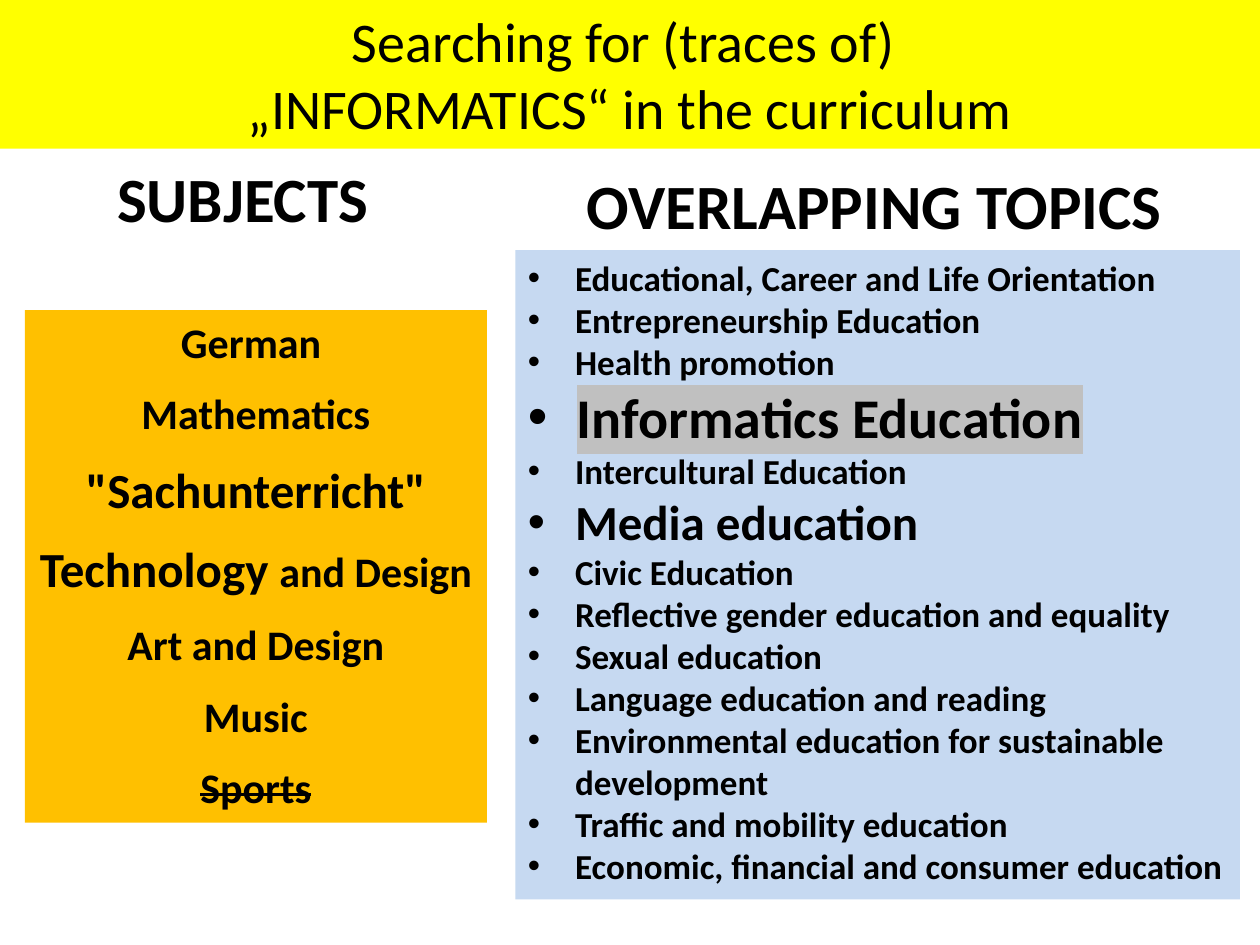
from lxml.etree import SubElement
from pptx import Presentation
from pptx.dml.color import RGBColor
from pptx.enum.shapes import MSO_SHAPE as Shape
from pptx.enum.text import MSO_ANCHOR as Anchor, MSO_AUTO_SIZE as AutoSize, PP_ALIGN as Align
from pptx.oxml.ns import qn
from pptx.util import Pt

BLACK = RGBColor(0x00, 0x00, 0x00)
YELLOW = RGBColor(0xFF, 0xFF, 0x00)
ORANGE = RGBColor(0xFF, 0xC0, 0x00)
LIGHT_BLUE = RGBColor(0xC6, 0xD9, 0xF1)
SILVER = RGBColor(0xC0, 0xC0, 0xC0)

presentation = Presentation()
presentation.slide_width, presentation.slide_height = Pt(720), Pt(540)
slide = presentation.slides.add_slide(presentation.slide_layouts[6])


def add_box(left, top, width, height, fill=None, wrap=True):
    bounds = Pt(left), Pt(top), Pt(width), Pt(height)
    if fill is None:
        shape = slide.shapes.add_textbox(*bounds)
    else:
        shape = slide.shapes.add_shape(Shape.RECTANGLE, *bounds)
        shape.shadow.inherit = False
        shape.fill.solid()
        shape.fill.fore_color.rgb = fill
        shape.line.fill.background()
    frame_format = {
        "word_wrap": wrap,
        "auto_size": AutoSize.SHAPE_TO_FIT_TEXT,
        "vertical_anchor": Anchor.TOP,
    }
    for name, value in frame_format.items():
        setattr(shape.text_frame, name, value)
    return shape.text_frame


def add_run(paragraph, text, size, bold=True):
    run = paragraph.add_run()
    run.text = text
    font_format = {"name": "Calibri", "size": Pt(size), "bold": bold}
    for name, value in font_format.items():
        setattr(run.font, name, value)
    run.font.color.rgb = BLACK
    return run


for heading, left, top, width in [
    ("OVERLAPPING TOPICS", 328.3, 91.4, 346.3),
    ("SUBJECTS", 59.8, 87.8, 159.1),
]:
    frame = add_box(left, top, width, 51, wrap=False)
    add_run(frame.paragraphs[0], heading, 36)

topics = [
    "Educational, Career and Life Orientation",
    "Entrepreneurship Education",
    "Health promotion",
    "Informatics Education",
    "Intercultural Education",
    "Media education",
    "Civic Education",
    "Reflective gender education and equality",
    "Sexual education",
    "Language education and reading",
    "Environmental education for sustainable development",
    "Traffic and mobility education",
    "Economic, financial and consumer education",
]
topic_sizes = {"Informatics Education": 32, "Media education": 28}
frame = add_box(294.5, 143, 414, 371, LIGHT_BLUE)
for index, topic in enumerate(topics):
    paragraph = frame.add_paragraph() if index else frame.paragraphs[0]
    paragraph.alignment = Align.LEFT
    indent = Pt(28 if topic == "Informatics Education" else 27)
    properties = paragraph._p.get_or_add_pPr()
    properties.set("marL", str(indent))
    properties.set("indent", str(-indent))
    SubElement(properties, qn("a:buFont"), typeface="Arial")
    SubElement(properties, qn("a:buChar"), char="•")
    run = add_run(paragraph, topic, topic_sizes.get(topic, 20))
    if topic == "Informatics Education":
        highlight = SubElement(run.font._element, qn("a:highlight"))
        SubElement(highlight, qn("a:srgbClr"), val=str(SILVER))
        run.font._element.find(qn("a:solidFill")).addnext(highlight)

subjects = [
    [("German ", 24)],
    [("Mathematics", 24)],
    [('"Sachunterricht"', 28)],
    [("Technology ", 28), ("and Design", 24)],
    [("Art and Design", 24)],
    [("Music", 24)],
    [("Sports", 24)],
]
frame = add_box(14.2, 177.2, 264, 293, ORANGE, wrap=False)
for index, subject in enumerate(subjects):
    paragraph = frame.add_paragraph() if index else frame.paragraphs[0]
    paragraph.alignment = Align.CENTER
    paragraph.space_after = Pt(12)
    for text, size in subject:
        run = add_run(paragraph, text, size)
        if text == "Sports":
            run.font._element.set("strike", "sngStrike")

paragraph = add_box(0, 0, 720, 85, YELLOW).paragraphs[0]
paragraph.alignment = Align.CENTER
add_run(paragraph, "Searching for (traces of) ", 32, bold=False)
paragraph.add_line_break()
add_run(paragraph, "„INFORMATICS“ in the curriculum", 32, bold=False)

presentation.save("out.pptx")
